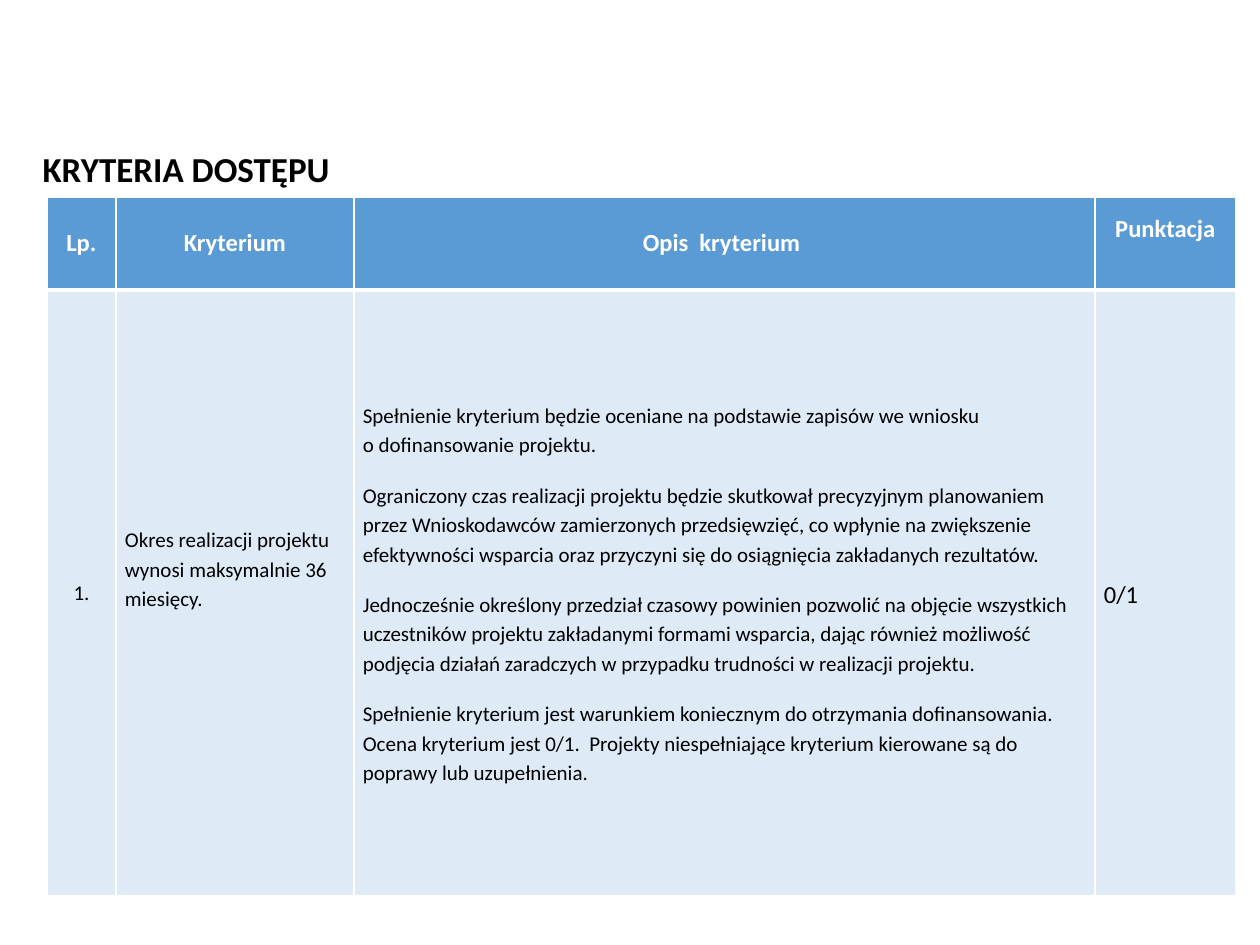
import pptx
import pptx.dml.color
import pptx.enum.text
import pptx.oxml
import pptx.oxml.ns
import pptx.util

FONT = "Calibri"
HEADERS = ["Lp.", "Kryterium", "Opis  kryterium ", "Punktacja"]
COLUMN_WIDTHS = [69, 238, 741, 141]
ROW_HEIGHTS = [93, 606]
PERIOD = "Okres realizacji projektu wynosi maksymalnie 36  miesięcy."
DESCRIPTION = [
    "Spełnienie kryterium będzie oceniane na podstawie zapisów we wniosku \n"
    "o dofinansowanie projektu.",
    "Ograniczony czas realizacji projektu będzie skutkował precyzyjnym "
    "planowaniem przez Wnioskodawców zamierzonych przedsięwzięć, co wpłynie "
    "na zwiększenie efektywności wsparcia oraz przyczyni się do osiągnięcia "
    "zakładanych rezultatów.",
    "Jednocześnie określony przedział czasowy powinien pozwolić na objęcie "
    "wszystkich uczestników projektu zakładanymi formami wsparcia, dając "
    "również możliwość podjęcia działań zaradczych w przypadku trudności "
    "w realizacji projektu.",
    "Spełnienie kryterium jest warunkiem koniecznym do otrzymania "
    "dofinansowania. Ocena kryterium jest 0/1.  Projekty niespełniające "
    "kryterium kierowane są do poprawy lub uzupełnienia.",
]
CENTER = pptx.enum.text.PP_ALIGN.CENTER
LEFT = pptx.enum.text.PP_ALIGN.LEFT
MIDDLE = pptx.enum.text.MSO_ANCHOR.MIDDLE


def px(n):
    return pptx.util.Emu(round(n * 914400 / 126))


def rgb(color):
    return pptx.dml.color.RGBColor.from_string(color)


def format_runs(p, size, color, bold=False):
    for r in p.runs:
        r.font.name = FONT
        r.font.size = pptx.util.Pt(size)
        r.font.bold = bold
        r.font.color.rgb = rgb(color)


def set_borders(cell, top, bottom):
    """Draw white cell edges; top and bottom are widths in points."""
    tc_pr = cell._tc.get_or_add_tcPr()
    for side, width in zip("LRTB", (1, 1, top, bottom)):
        tc_pr.append(pptx.oxml.parse_xml(
            f'<a:ln{side} {pptx.oxml.ns.nsdecls("a")} w="{width * 12700}">'
            '<a:solidFill><a:srgbClr val="FFFFFF"/></a:solidFill>'
            f'</a:ln{side}>'))


def fill_cell(cell, fill, borders):
    set_borders(cell, *borders)
    cell.fill.solid()
    cell.fill.fore_color.rgb = rgb(fill)
    cell.vertical_anchor = MIDDLE


def add_header_cell(cell, text):
    fill_cell(cell, "5B9BD5", (1, 3))
    p = cell.text_frame.paragraphs[0]
    p.text = text
    p.alignment = CENTER
    format_runs(p, 14, "FFFFFF", bold=True)


def add_body_cell(cell, texts, size=12):
    fill_cell(cell, "DEEBF7", (3, 1))
    cell.margin_left = cell.margin_right = px(9)
    cell.margin_top = cell.margin_bottom = 0
    tf = cell.text_frame
    for i, text in enumerate(texts):
        p = tf.add_paragraph() if i else tf.paragraphs[0]
        p.text = text
        p.line_spacing = 1.15
        if i:
            p.space_before = pptx.util.Pt(12)
        format_runs(p, size, "000000")


def add_title(s, text):
    sp = s.shapes.title
    sp.left, sp.top, sp.width, sp.height = px(30), px(141), px(466), px(55)
    tf = sp.text_frame
    tf.text = text
    tf.word_wrap = True
    tf.vertical_anchor = MIDDLE
    p = tf.paragraphs[0]
    p.alignment = LEFT
    format_runs(p, 20, "000000", bold=True)


def add_criteria_table(s):
    frame = s.shapes.add_table(2, 4, px(47), px(197), px(sum(COLUMN_WIDTHS)),
                               px(sum(ROW_HEIGHTS)))
    table = frame.table
    for column, width in zip(table.columns, COLUMN_WIDTHS):
        column.width = px(width)
    for row, height in zip(table.rows, ROW_HEIGHTS):
        row.height = px(height)

    for i, text in enumerate(HEADERS):
        add_header_cell(table.cell(0, i), text)
    table.cell(0, 3).margin_bottom = px(36)

    number, period, description, score = table.rows[1].cells
    add_body_cell(number, ["1."])
    number.text_frame.paragraphs[0].alignment = CENTER
    number.text_frame.paragraphs[0].line_spacing = 1.0
    add_body_cell(period, [PERIOD])
    period.margin_bottom = px(50)
    add_body_cell(description, DESCRIPTION)
    add_body_cell(score, ["0/1"], size=14)


def main():
    prs = pptx.Presentation()
    prs.slide_width, prs.slide_height = px(1260), px(945)
    s = prs.slides.add_slide(prs.slide_layouts[5])
    add_criteria_table(s)
    add_title(s, "KRYTERIA DOSTĘPU")
    prs.save("out.pptx")


if __name__ == "__main__":
    main()
